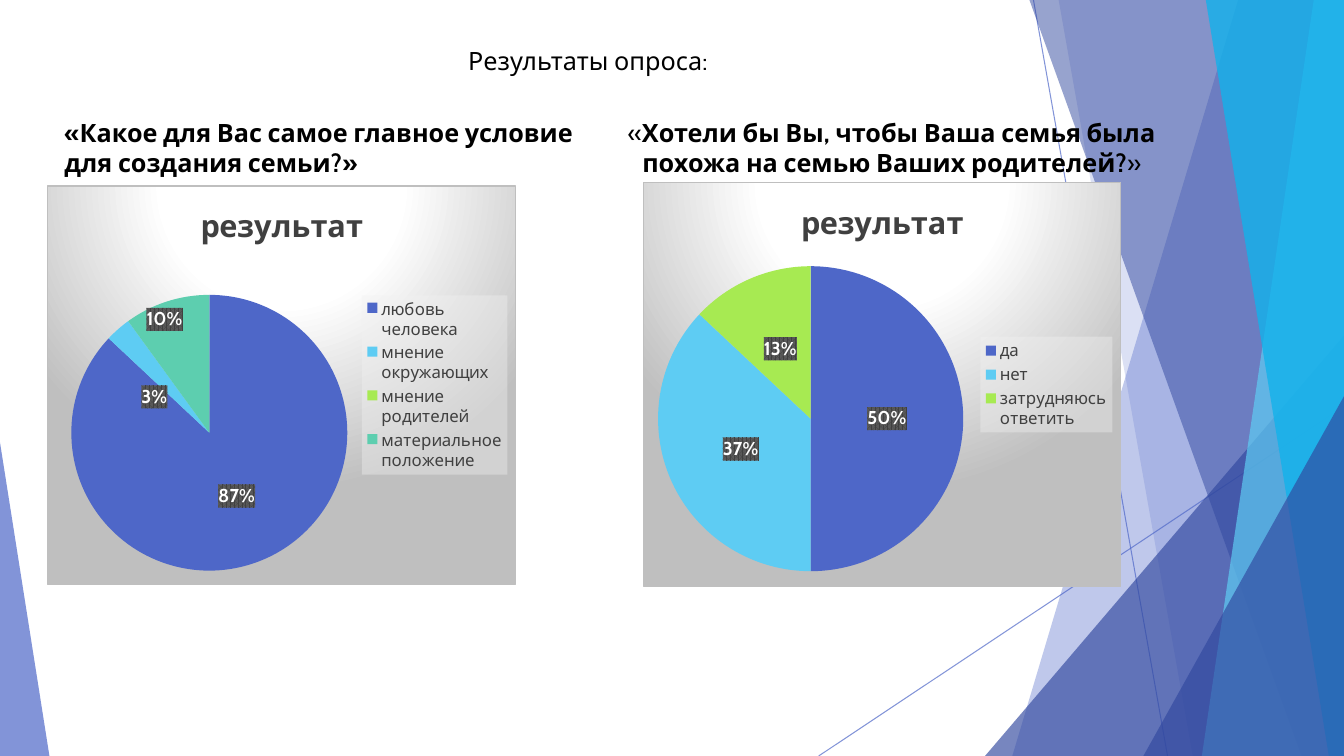
"""Build the survey results slide with two pie charts."""
import copy

import pptx
import pptx.chart.data
import pptx.dml.color
import pptx.enum.chart
import pptx.enum.shapes
import pptx.enum.text
import pptx.oxml
import pptx.oxml.ns
import pptx.util

Inches = pptx.util.Inches
RGBColor = pptx.dml.color.RGBColor

BLUE = RGBColor(0x4E, 0x67, 0xC8)
SKY = RGBColor(0x5E, 0xCC, 0xF3)
LIME = RGBColor(0xA7, 0xEA, 0x52)
TEAL = RGBColor(0x5D, 0xCE, 0xAF)
NAVY = RGBColor(0x31, 0x48, 0x9F)
CYAN = RGBColor(0x12, 0xB2, 0xEB)
BLACK = RGBColor(0, 0, 0)
GRAPHITE = RGBColor(0x40, 0x40, 0x40)
SLATE = RGBColor(0x59, 0x59, 0x59)
SILVER = RGBColor(0xBF, 0xBF, 0xBF)
PALE = RGBColor(0xF2, 0xF2, 0xF2)
WHITE = RGBColor(0xFF, 0xFF, 0xFF)
FONT = "Cabin"
NAMESPACES = pptx.oxml.ns.nsdecls("a", "c")

BANDS = [
    ([(12.28, 0), (13.33, 0), (13.33, 7.5), (10.04, 7.5)], BLUE, 36),
    ([(10.5, 0), (13.33, 0), (13.33, 7.5), (11.83, 7.5)], BLUE, 20),
    ([(10.21, 0), (13.33, 0), (13.33, 7.5), (12.91, 7.5)], NAVY, 50),
    ([(13.03, 0), (13.33, 0), (13.33, 7.5), (11.92, 7.5)], SKY, 70),
    ([(11.96, 0), (13.33, 0), (13.33, 7.5), (13.18, 7.5)], CYAN, 80),
]


def style_font(font, size, color, bold=False):
    font.name = FONT
    font.size = pptx.util.Pt(size)
    font.color.rgb = color
    font.bold = bold


def color_xml(color, alpha=100):
    return f'<a:srgbClr val="{color}"><a:alpha val="{alpha * 1000}"/></a:srgbClr>'


def properties(content):
    return pptx.oxml.parse_xml(f"<c:spPr {NAMESPACES}>{content}</c:spPr>")


def set_alpha(holder, alpha):
    solid = holder.find(".//" + pptx.oxml.ns.qn("a:srgbClr"))
    pptx.oxml.ns.qn("a:alpha")
    solid.append(pptx.oxml.parse_xml(f'<a:alpha {NAMESPACES} val="{alpha * 1000}"/>'))


def tint(shape, color, alpha):
    shape.shadow.inherit = False
    shape.fill.solid()
    shape.fill.fore_color.rgb = color
    shape.line.fill.background()
    set_alpha(shape.fill._xPr, alpha)


def add_ray(slide, start, end):
    ray = slide.shapes.add_connector(
        pptx.enum.shapes.MSO_CONNECTOR.STRAIGHT, *map(Inches, start + end))
    ray.line.color.rgb = BLUE
    ray.line.width = pptx.util.Pt(0.75)
    outline = ray.line._get_or_add_ln()
    set_alpha(outline, 70)
    outline.addnext(pptx.oxml.parse_xml(f"<a:effectLst {NAMESPACES}/>"))


def add_band(slide, corners, color, alpha):
    first, *rest = [tuple(map(Inches, corner)) for corner in corners]
    builder = slide.shapes.build_freeform(*first)
    builder.add_line_segments(rest, close=True)
    tint(builder.convert_to_shape(), color, alpha)


def add_corner(slide, box, apex, color, alpha):
    corner = slide.shapes.add_shape(
        pptx.enum.shapes.MSO_SHAPE.ISOSCELES_TRIANGLE, *map(Inches, box))
    corner.adjustments[0] = apex
    tint(corner, color, alpha)


def add_backdrop(slide):
    add_ray(slide, (10.25, 0), (11.58, 7.5))
    add_ray(slide, (13.33, 4.03), (8.12, 7.5))
    for band in BANDS[:2]:
        add_band(slide, *band)
    add_corner(slide, (9.77, 3.33, 3.56, 4.17), 1, NAVY, 66)
    for band in BANDS[2:]:
        add_band(slide, *band)
    add_corner(slide, (11.34, 3.93, 1.99, 3.57), 1, NAVY, 66)
    add_corner(slide, (0, 4.39, 0.49, 3.11), 0, BLUE, 70)


def write_text(holder, box, pieces, alignment):
    holder.left, holder.top, holder.width, holder.height = map(Inches, box)
    frame = holder.text_frame
    frame.word_wrap = True
    frame.vertical_anchor = pptx.enum.text.MSO_ANCHOR.TOP
    paragraph = frame.paragraphs[0]
    paragraph.alignment = alignment
    for words, bold in pieces:
        run = paragraph.add_run()
        run.text = words
        style_font(run.font, 18, BLACK, bold)


def add_question(slide, box, pieces, alignment):
    write_text(slide.shapes.add_textbox(0, 0, 0, 0), box, pieces, alignment)


def layout_xml(x, y, size=None):
    inner, extent = "", ""
    if size:
        inner = ('<c:layoutTarget val="inner"/><c:xMode val="edge"/>'
                 '<c:yMode val="edge"/>')
        extent = f'<c:w val="{size[0]}"/><c:h val="{size[1]}"/>'
    return (f"<c:layout {NAMESPACES}><c:manualLayout>{inner}"
            f'<c:x val="{x}"/><c:y val="{y}"/>{extent}</c:manualLayout></c:layout>')


def move_label(labels, index, offset):
    """Shift one label from its slice centre, or hide it when offset is None."""
    root = labels._element
    body = '<c:delete val="1"/>' if offset is None else layout_xml(*offset)
    label = pptx.oxml.parse_xml(
        f'<c:dLbl {NAMESPACES}><c:idx val="{index}"/>{body}</c:dLbl>')
    if offset is not None:
        kept = ("numFmt", "spPr", "txPr", "dLblPos", "showLegendKey", "showVal",
                "showCatName", "showSerName", "showPercent", "showBubbleSize")
        for name in kept:
            for part in root.findall(pptx.oxml.ns.qn(f"c:{name}")):
                label.append(copy.deepcopy(part))
    root.insert(index_of_next_label(root), label)


def index_of_next_label(root):
    return len(root.findall(pptx.oxml.ns.qn("c:dLbl")))


def label_slices(series, offsets):
    labels = series.data_labels
    labels.show_value = False
    labels.show_percentage = True
    labels.number_format = "0%"
    labels.number_format_is_linked = False
    style_font(labels.font, 13.3, WHITE, True)
    labels.position = pptx.enum.chart.XL_LABEL_POSITION.CENTER
    labels._element.find(pptx.oxml.ns.qn("c:txPr")).addprevious(properties(
        f'<a:pattFill prst="pct75"><a:fgClr>{color_xml(GRAPHITE)}</a:fgClr>'
        f"<a:bgClr>{color_xml(SLATE)}</a:bgClr></a:pattFill>"))
    for index, offset in offsets.items():
        move_label(labels, index, offset)


def add_pie(slide, box, answers, colors, plot_area, offsets):
    survey = pptx.chart.data.CategoryChartData()
    survey.categories = list(answers)
    survey.add_series("результат", list(answers.values()))
    chart = slide.shapes.add_chart(
        pptx.enum.chart.XL_CHART_TYPE.PIE, *map(Inches, box), survey).chart
    style_font(chart.font, 10, BLACK)
    stops = "".join(f'<a:gs pos="{place * 1000}">{color_xml(color)}</a:gs>'
                    for place, color in ((0, WHITE), (39, WHITE), (100, SILVER)))
    chart._chartSpace.find(pptx.oxml.ns.qn("c:txPr")).addprevious(properties(
        f'<a:gradFill><a:gsLst>{stops}</a:gsLst><a:path path="circle">'
        '<a:fillToRect l="50000" t="-80000" r="50000" b="180000"/></a:path></a:gradFill>'
        f'<a:ln w="9525"><a:solidFill>{color_xml(SILVER)}</a:solidFill></a:ln>'))

    heading = chart.chart_title.text_frame
    heading.text = "результат"
    style_font(heading.paragraphs[0].runs[0].font, 22, GRAPHITE, True)
    chart.chart_title.include_in_layout = False

    chart.has_legend = True
    legend = chart.legend
    legend.position = pptx.enum.chart.XL_LEGEND_POSITION.RIGHT
    legend.include_in_layout = False
    style_font(legend.font, 12, GRAPHITE)
    legend._element.find(pptx.oxml.ns.qn("c:txPr")).addprevious(
        properties(f"<a:solidFill>{color_xml(PALE, 39)}</a:solidFill>"))

    plot = chart.plots[0]
    plot.vary_by_categories = True
    for index, color in enumerate(colors):
        slice_fill = plot.series[0].points[index].format.fill
        slice_fill.solid()
        slice_fill.fore_color.rgb = color
    label_slices(plot.series[0], offsets)
    area = chart._chartSpace.chart.plotArea
    for automatic in area.findall(pptx.oxml.ns.qn("c:layout")):
        area.remove(automatic)
    area.insert(0, pptx.oxml.parse_xml(layout_xml(*plot_area)))


def main():
    deck = pptx.Presentation()
    deck.slide_width, deck.slide_height = Inches(13.33), Inches(7.5)
    slide = deck.slides.add_slide(deck.slide_layouts[5])
    align = pptx.enum.text.PP_ALIGN
    add_backdrop(slide)
    write_text(slide.shapes.title, (2.47, 0.4, 6.72, 0.4),
               [("Результаты опроса:", False)], align.CENTER)
    add_pie(slide, (0.47, 1.84, 4.65, 3.96),
            {"любовь человека": 87, "мнение окружающих": 3,
             "мнение родителей": 0, "материальное положение": 10},
            (BLUE, SKY, LIME, TEAL), (0.05, 0.27, (0.59, 0.7)),
            {1: (-0.02, 0.04), 2: None, 3: (-0.05, -0.12)})
    add_question(slide, (0.54, 1.11, 5.29, 0.71),
                 [("«Какое для Вас самое главное условие для создания семьи?»", True)],
                 align.LEFT)
    add_pie(slide, (6.38, 1.81, 4.74, 4.01),
            {"да": 50, "нет": 37, "затрудняюсь ответить": 13},
            (BLUE, SKY, LIME), (0.03, 0.2, (0.64, 0.77)), {})
    add_question(slide, (5.83, 1.11, 6.03, 0.71),
                 [("«", False),
                  ("Хотели бы Вы, чтобы Ваша семья была похожа на семью Ваших родителей?", True),
                  ("»", False)], align.CENTER)
    deck.save("out.pptx")


if __name__ == "__main__":
    main()
